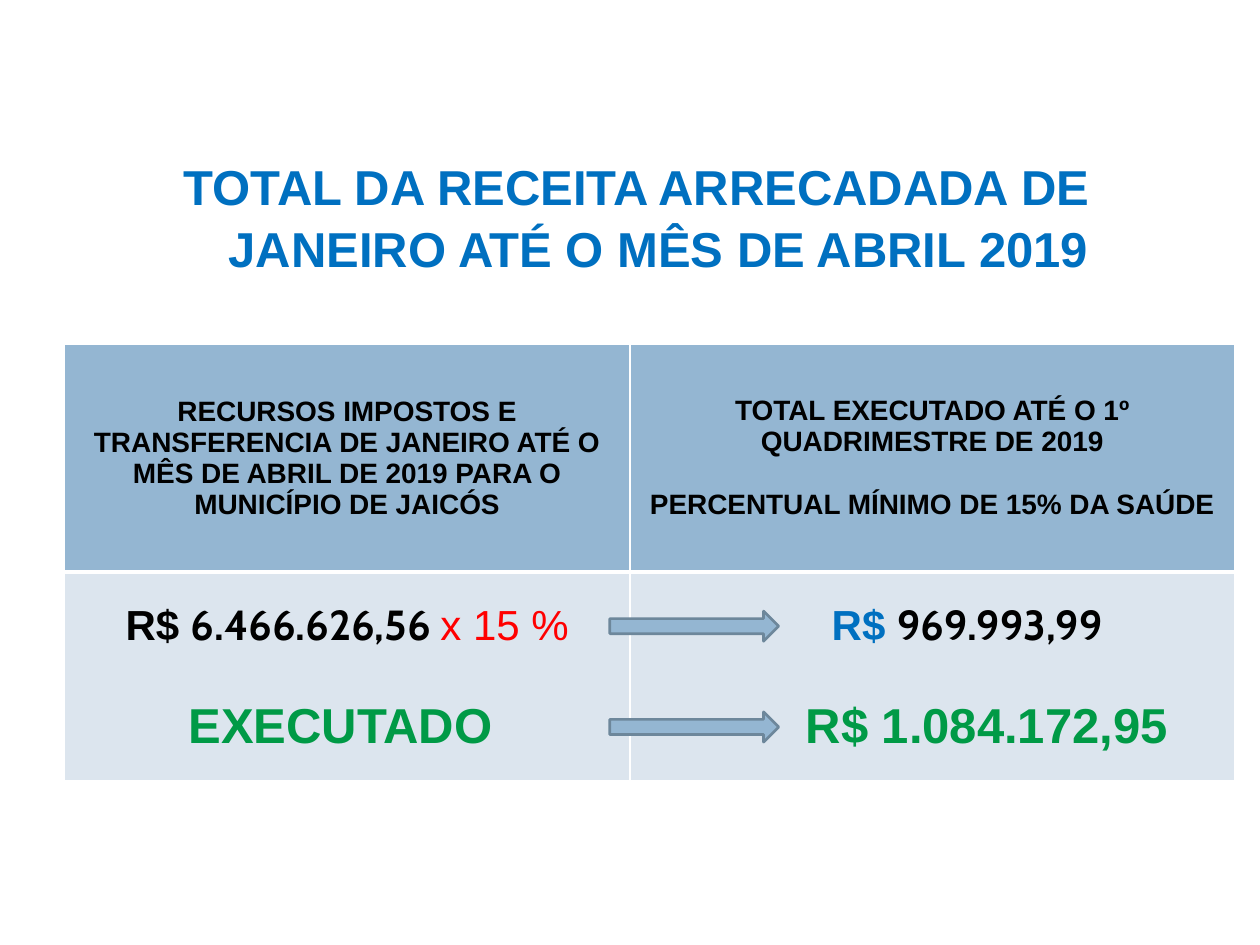
from lxml import etree
from pptx import Presentation
from pptx.dml.color import RGBColor
from pptx.enum.shapes import MSO_SHAPE
from pptx.enum.text import MSO_ANCHOR, PP_ALIGN
from pptx.oxml.ns import qn
from pptx.util import Pt

RIGHT_ARROW = MSO_SHAPE.RIGHT_ARROW
MIDDLE = MSO_ANCHOR.MIDDLE
CENTER = PP_ALIGN.CENTER

BLACK, WHITE, RED = "000000", "FFFFFF", "FF0000"
BLUE, GREEN = "0070C0", "009A46"
HEADER_FILL, BODY_FILL, ARROW_LINE = "94B6D2", "DCE5EE", "6D879B"


def color(hex_string):
    return RGBColor.from_string(hex_string)


def add_run(paragraph, text, size=16, ink=BLACK, bold=True, font="Arial"):
    run = paragraph.add_run()
    run.text = text
    run.font.size = Pt(size)
    run.font.name = font
    run.font.bold = bold
    run.font.color.rgb = color(ink)


def format_paragraph(paragraph, before=0, left=0, hanging=0):
    paragraph.alignment = CENTER
    paragraph.space_before = Pt(before)
    properties = paragraph._p.get_or_add_pPr()
    properties.set("marL", str(Pt(left)))
    properties.set("indent", str(-Pt(hanging)))


def add_title(slide, text):
    title = slide.shapes.add_textbox(Pt(39.6), Pt(84.24), Pt(648), Pt(396.72))
    title.text_frame.word_wrap = True
    paragraph = title.text_frame.paragraphs[0]
    format_paragraph(paragraph, left=25.2, hanging=25.2)
    paragraph.line_spacing = 1.05
    add_run(paragraph, text, size=28, ink=BLUE)


def set_borders(cell, bottom):
    properties = cell._tc.get_or_add_tcPr()
    for side, width in (("L", 1), ("R", 1), ("T", 1), ("B", bottom)):
        border = etree.SubElement(properties, qn(f"a:ln{side}"), w=str(Pt(width)))
        fill = etree.SubElement(border, qn("a:solidFill"))
        etree.SubElement(fill, qn("a:srgbClr"), val=WHITE)


def fill_cell(cell, lines, fill, bottom):
    cell.vertical_anchor = MIDDLE
    set_borders(cell, bottom)
    cell.fill.solid()
    cell.fill.fore_color.rgb = color(fill)
    frame = cell.text_frame
    for index, (layout, runs) in enumerate(lines):
        paragraph = frame.add_paragraph() if index else frame.paragraphs[0]
        format_paragraph(paragraph, **layout)
        for text, style in runs:
            add_run(paragraph, text, **style)


def add_revenue_table(slide):
    header = [
        [({}, [("RECURSOS IMPOSTOS E TRANSFERENCIA DE JANEIRO ATÉ O MÊS DE "
                "ABRIL DE 2019 PARA O MUNICÍPIO DE JAICÓS", {})])],
        [({}, [("TOTAL EXECUTADO ATÉ O 1º QUADRIMESTRE DE 2019", {})]),
         ({"before": 18.4}, [("PERCENTUAL MÍNIMO DE 15% DA SAÚDE", {})])],
    ]
    executed = {"size": 28, "ink": GREEN}
    amount = {"size": 24, "font": "Cabin"}
    body = [
        [({}, [("R$ ", {"size": 24}),
               ("6.466.626,56 ", amount),
               ("x 15 %", {"size": 24, "ink": RED, "bold": False})]),
         ({"before": 27.6}, [("EXECUTADO ", executed)])],
        [({"left": 40}, [("R$ ", {"size": 24, "ink": BLUE}),
                         ("969.993,99", amount)]),
         ({"before": 27.6, "left": 62}, [("R$ 1.084.172,95", executed)])],
    ]
    table = slide.shapes.add_table(
        2, 2, Pt(36.72), Pt(196.56), Pt(668.88), Pt(249.84)).table
    table.first_row = table.horz_banding = False
    for column, width in zip(table.columns, (323.28, 345.6)):
        column.width = Pt(width)
    rows = ((130.32, header, HEADER_FILL, 3), (119.52, body, BODY_FILL, 1))
    for row, (height, contents, fill, bottom) in zip(table.rows, rows):
        row.height = Pt(height)
        for cell, lines in zip(row.cells, contents):
            fill_cell(cell, lines, fill, bottom)


def add_arrow(slide, top):
    arrow = slide.shapes.add_shape(
        RIGHT_ARROW, Pt(348.48), Pt(top), Pt(96.48), Pt(17.28))
    arrow.shadow.inherit = False
    arrow.fill.solid()
    arrow.fill.fore_color.rgb = color(HEADER_FILL)
    arrow.line.color.rgb = color(ARROW_LINE)
    arrow.line.width = Pt(1.5)


def main():
    presentation = Presentation()
    presentation.slide_width = Pt(720)
    presentation.slide_height = Pt(540)
    slide = presentation.slides.add_slide(presentation.slide_layouts[6])
    add_title(slide, "TOTAL DA RECEITA ARRECADADA DE JANEIRO ATÉ O MÊS DE ABRIL 2019")
    add_revenue_table(slide)
    for top in (349.2, 406.8):
        add_arrow(slide, top)
    presentation.save("out.pptx")


if __name__ == "__main__":
    main()
